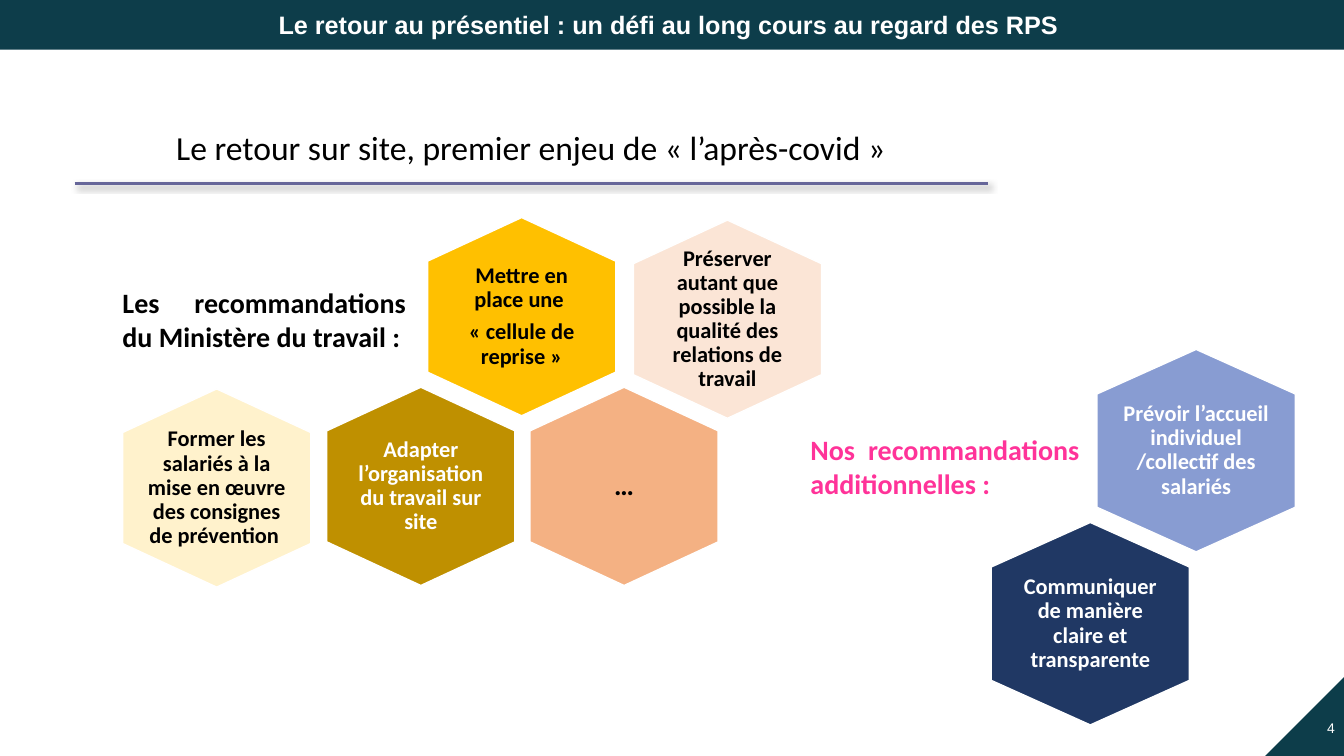
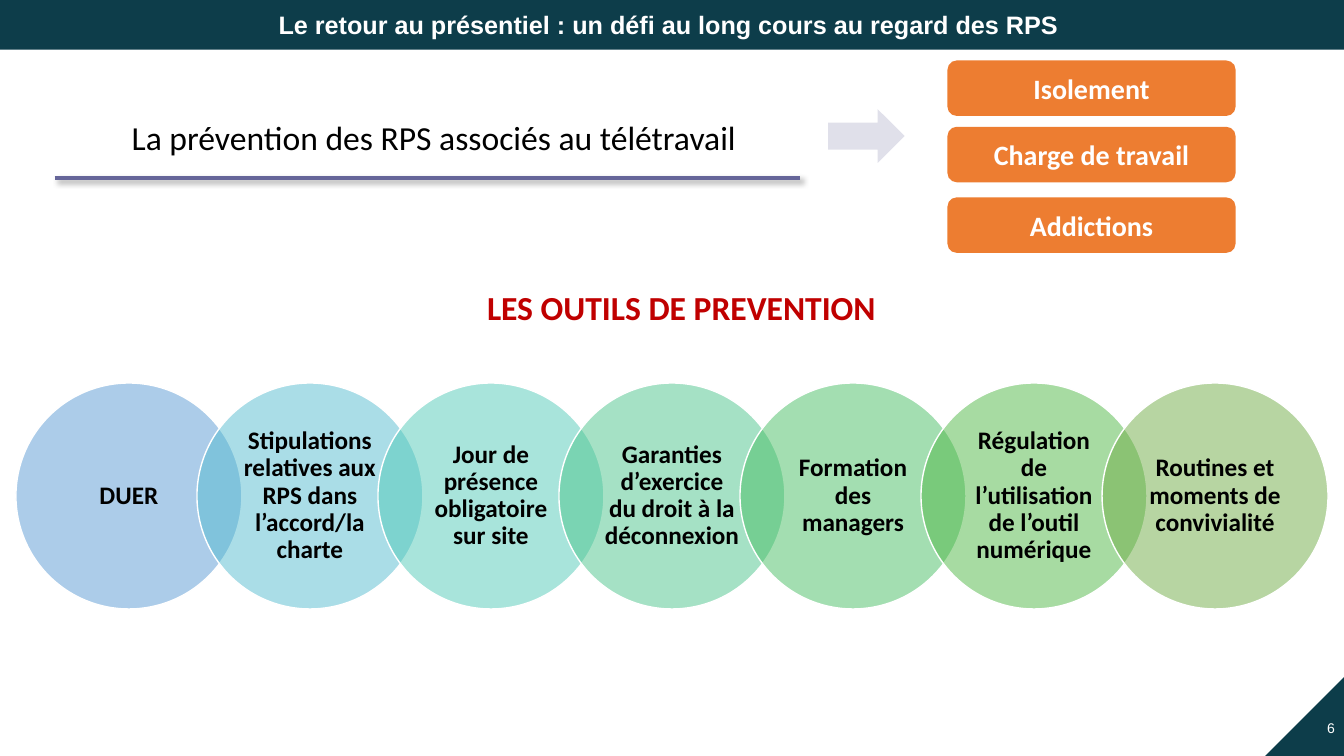
from dataclasses import dataclass
from math import sqrt

from lxml.etree import SubElement
from pptx import Presentation
from pptx.dml.color import RGBColor
from pptx.enum.shapes import MSO_CONNECTOR, MSO_SHAPE
from pptx.enum.text import MSO_ANCHOR, PP_ALIGN
from pptx.oxml.ns import qn
from pptx.shapes.autoshape import Shape
from pptx.slide import Slide
from pptx.util import Emu, Inches, Pt

COLUMNS, ROWS = 160, 90
CELL = Inches(1) / 12

COLORS = {
    "petrol": "0D3D4A",
    "white": "FFFFFF",
    "black": "000000",
    "violet": "666699",
    "pink": "FF3399",
    "red": "C00000",
    "orange": "ED7D31",
    "gold": "FFC000",
    "dark gold": "BF9000",
    "cream": "FFF2CC",
    "peach": "F4B183",
    "light peach": "FBE5D6",
    "navy": "203864",
    "periwinkle": "889CD2",
    "blue": "5B9BD5",
    "sky": "56BCD0",
    "teal": "52CAB8",
    "mint": "4DC58D",
    "emerald": "49BF64",
    "leaf": "50B846",
    "olive": "70AD47",
}

BAND_TEXT = "Le retour au présentiel : un défi au long cours au regard des RPS "
SHOULDER = 0.22
INSCRIBED = 1 / sqrt(2)


@dataclass(frozen=True)
class Area:
    left: float
    top: float
    width: float
    height: float


@dataclass(frozen=True)
class Style:
    size: float
    color: str = "black"
    bold: bool = False
    align: PP_ALIGN = PP_ALIGN.CENTER
    font: str = "Calibri"
    line_spacing: float = 1
    after: float = 0


@dataclass(frozen=True)
class Hexagon:
    left: float
    top: float
    fill: str
    paragraphs: tuple[str, ...]
    ink: str = "black"
    size: float = 16
    inset: tuple[float, float] = (2.9, 3.4)


@dataclass(frozen=True)
class Tool:
    text: str
    fill: str


BAND = Style(18, "white", True, font="Arial")
NUMBER = Style(10, "white", align=PP_ALIGN.RIGHT, font="Arial")
TITLE = Style(24, align=PP_ALIGN.LEFT)
HEADING = Style(24, "red", True, PP_ALIGN.LEFT)
PILL = Style(20, "white", True)
TOOL = Style(18, bold=True, line_spacing=0.9, after=0.35)

WIDE_INSET = (3.5, 4)
MINISTRY_HEXAGONS = (
    Hexagon(50.9, 25.9, "gold", ("Mettre en place une ", "« cellule de reprise »"),
            inset=WIDE_INSET),
    Hexagon(75.4, 26.2, "light peach",
            ("Préserver autant que possible la qualité des relations de travail",)),
    Hexagon(63.1, 46.1, "peach", ("…",), size=20, inset=WIDE_INSET),
    Hexagon(38.9, 46.1, "dark gold", ("Adapter l’organisation du travail sur site",),
            "white"),
    Hexagon(14.6, 46.3, "cream",
            ("Former les salariés à la mise en œuvre des consignes de prévention ",)),
)
OWN_HEXAGONS = (
    Hexagon(118, 62.2, "navy", ("Communiquer de manière claire et transparente",),
            "white", inset=WIDE_INSET),
    Hexagon(130.6, 41.6, "periwinkle",
            ("Prévoir l’accueil individuel /collectif des salariés",), "white"),
)
RISKS = (("Isolement", 7.2), ("Charge de travail", 15.1), ("Addictions", 23.5))
TOOLS = (
    Tool("DUER", "blue"),
    Tool("Stipulations relatives aux RPS dans l’accord/la charte", "sky"),
    Tool("Jour de présence obligatoire sur site", "teal"),
    Tool("Garanties d’exercice du droit à la déconnexion ", "mint"),
    Tool("Formation des managers", "emerald"),
    Tool("Régulation de l’utilisation de l’outil numérique", "leaf"),
    Tool("Routines et moments de convivialité", "olive"),
)


def cells(count: float) -> Emu:
    return Emu(round(count * CELL))


def place(area: Area) -> tuple[Emu, ...]:
    return tuple(map(cells, (area.left, area.top, area.width, area.height)))


def color(name: str) -> RGBColor:
    return RGBColor.from_string(COLORS[name])


def write(shape: Shape, paragraphs: tuple[str, ...], style: Style,
          inset: tuple[float, float] = (1.2, 0.6),
          anchor: MSO_ANCHOR = MSO_ANCHOR.MIDDLE, wrap: bool = True) -> None:
    frame = shape.text_frame
    frame.word_wrap = wrap
    frame.vertical_anchor = anchor
    frame.margin_left = frame.margin_right = cells(inset[0])
    frame.margin_top = frame.margin_bottom = cells(inset[1])
    for index, text in enumerate(paragraphs):
        para = frame.add_paragraph() if index else frame.paragraphs[0]
        para.alignment = style.align
        para.line_spacing = style.line_spacing
        para.space_after = Pt(style.size * style.after)
        span = para.add_run()
        span.text = text
        span.font.name = style.font
        span.font.size = Pt(style.size)
        span.font.bold = style.bold
        span.font.color.rgb = color(style.color)


def paint(shape: Shape, fill: str, opacity: int = 100, outlined: bool = False) -> None:
    shape.shadow.inherit = False
    shape.fill.solid()
    shape.fill.fore_color.rgb = color(fill)
    if opacity < 100:
        tint = shape.element.spPr.find(f"{qn('a:solidFill')}/{qn('a:srgbClr')}")
        SubElement(tint, qn("a:alpha"), val=str(opacity * 1000))
    if outlined:
        shape.line.color.rgb = color("white")
        shape.line.width = Pt(1)
    else:
        shape.line.fill.background()


def add_figure(page: Slide, kind: MSO_SHAPE, area: Area, fill: str,
               opacity: int = 100, outlined: bool = False) -> Shape:
    shape = page.shapes.add_shape(kind, *place(area))
    paint(shape, fill, opacity, outlined)
    return shape


def add_text(page: Slide, area: Area, text: str, style: Style, wrap: bool = True) -> None:
    box = page.shapes.add_textbox(*place(area))
    write(box, (text,), style, anchor=MSO_ANCHOR.TOP, wrap=wrap)


def add_hexagon(page: Slide, hexagon: Hexagon, width: float, height: float) -> None:
    left, top = hexagon.left, hexagon.top
    right, bottom, middle = left + width, top + height, left + width / 2
    upper, lower = top + height * SHOULDER, bottom - height * SHOULDER
    corners = ((right, upper), (right, lower), (middle, bottom), (left, lower), (left, upper))
    builder = page.shapes.build_freeform(cells(middle), cells(top))
    builder.add_line_segments([(cells(x), cells(y)) for x, y in corners], close=True)
    shape = builder.convert_to_shape()
    paint(shape, hexagon.fill, outlined=True)
    style = Style(hexagon.size, hexagon.ink, True, line_spacing=0.9, after=0.35)
    write(shape, hexagon.paragraphs, style, hexagon.inset)


def add_rule(page: Slide, left: float, right: float, top: float) -> None:
    rule = page.shapes.add_connector(
        MSO_CONNECTOR.STRAIGHT, cells(left), cells(top), cells(right), cells(top))
    rule.line.color.rgb = color("violet")
    rule.line.width = Pt(2.25)
    effects = SubElement(rule.element.spPr, qn("a:effectLst"))
    shadow = SubElement(effects, qn("a:outerShdw"), blurRad=str(Pt(4)), dist=str(Pt(3)),
                        dir=str(45 * 60000), algn="tl", rotWithShape="0")
    tint = SubElement(shadow, qn("a:srgbClr"), val=COLORS["black"])
    SubElement(tint, qn("a:alpha"), val="40000")


def add_page(deck: Presentation, number: str) -> Slide:
    page = deck.slides.add_slide(deck.slide_layouts[6])
    band = add_figure(page, MSO_SHAPE.RECTANGLE, Area(0, 0, COLUMNS, 5.9), "petrol")
    write(band, (BAND_TEXT,), BAND)
    corner = add_figure(page, MSO_SHAPE.RIGHT_TRIANGLE, Area(150.5, 80.4, 9.7, 9.7), "petrol")
    corner.rotation = 270
    add_text(page, Area(122.8, 85.1, 37.3, 4.8), number, NUMBER)
    return page


def add_return_page(deck: Presentation) -> None:
    page = add_page(deck, "4")
    add_text(page, Area(19.8, 14.5, 92.6, 6),
             "Le retour sur site, premier enjeu de « l’après-covid »", TITLE)
    add_rule(page, 8.9, 117.6, 21.8)
    for hexagon in MINISTRY_HEXAGONS:
        add_hexagon(page, hexagon, 22.4, 23.6)
    for hexagon in OWN_HEXAGONS:
        add_hexagon(page, hexagon, 23.6, 24.1)
    add_text(page, Area(13.4, 33.4, 36.1, 9.2),
             "Les recommandations du Ministère du travail :",
             Style(20, bold=True, align=PP_ALIGN.JUSTIFY))
    add_text(page, Area(95.3, 50.9, 34.4, 9.2),
             "Nos recommandations additionnelles : ",
             Style(20, "pink", True, PP_ALIGN.JUSTIFY))


def add_prevention_page(deck: Presentation) -> None:
    page = add_page(deck, "6")
    add_text(page, Area(14.5, 13.3, 75.1, 6),
             "La prévention des RPS associés au télétravail", TITLE, wrap=False)
    add_rule(page, 6.5, 95.3, 21.2)
    add_figure(page, MSO_SHAPE.RIGHT_ARROW, Area(98.6, 13, 9.1, 6.4), "violet", 20)
    for risk, top in RISKS:
        pill = add_figure(page, MSO_SHAPE.ROUNDED_RECTANGLE,
                          Area(112.8, top, 34.3, 6.6), "orange")
        write(pill, (risk,), PILL)
    add_text(page, Area(56.8, 33.6, 49.2, 6), "LES OUTILS DE PREVENTION", HEADING, wrap=False)

    first, pitch, top, diameter = 1.9, 21.55, 45.6, 26.9
    side = diameter * INSCRIBED
    margin = (diameter - side) / 2
    for index, tool in enumerate(TOOLS):
        left = first + index * pitch
        add_figure(page, MSO_SHAPE.OVAL, Area(left, top, diameter, diameter),
                   tool.fill, 50, outlined=True)
        box = page.shapes.add_textbox(*place(Area(left + margin, top + margin, side, side)))
        write(box, (tool.text,), TOOL, (1.44, 0.36))


def main() -> None:
    deck = Presentation()
    deck.slide_width = cells(COLUMNS)
    deck.slide_height = cells(ROWS)
    add_return_page(deck)
    add_prevention_page(deck)
    deck.save("out.pptx")


if __name__ == "__main__":
    main()
